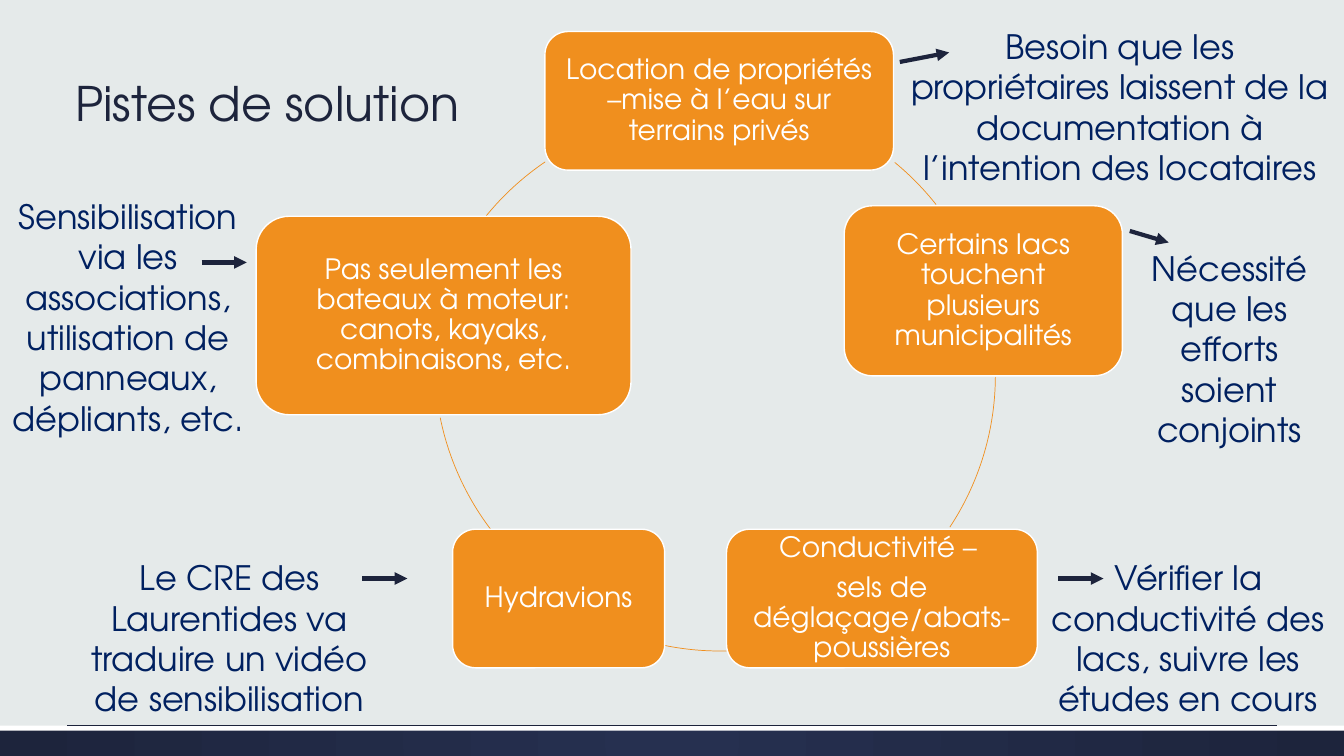
"""Build the slide "Pistes de solution": a ring of topics with notes and arrows."""
from lxml.etree import SubElement
from pptx import Presentation
from pptx.dml.color import RGBColor
from pptx.enum.shapes import MSO_CONNECTOR, MSO_SHAPE
from pptx.enum.text import MSO_ANCHOR, PP_ALIGN
from pptx.oxml.ns import qn
from pptx.util import Emu, Pt

PX = 9525
FONT = "TeX Gyre Adventor"
COLORS = {
    "background": "E5EAEA",
    "dark": "1D243C",
    "band": "263050",
    "topic": "F08F1E",
    "note": "002060",
    "white": "FFFFFF",
}
RING_DIAMETER = 525

TOPICS = [
    (519, 30, 332, 132, ["Location de propriétés –mise à l’eau sur terrains privés"]),
    (804, 196, 265, 162, ["Certains lacs touchent plusieurs municipalités"]),
    (692, 504, 296, 132, ["Conductivité – ", "sels de déglaçage/abats-poussières"]),
    (431, 504, 202, 132, ["Hydravions"]),
    (244, 206, 357, 189, ["Pas seulement les bateaux à moteur: canots, kayaks, combinaisons, etc."]),
]
ARCS = [
    (423, 95, 309.4, 321.7),
    (423, 95, 0.3, 33.4),
    (423, 95, 88.6, 101.5),
    (414, 83, 142.9, 168.5),
    (404, 109, 219.2, 235.9),
]
NOTES = [
    (983, 526, 297, 165, "Vérifier la conductivité des lacs, suivre les études en cours"),
    (70, 526, 297, 165, "Le CRE des Laurentides va traduire un vidéo de sensibilisation"),
    (1079, 231, 184, 204, "Nécessité que les efforts soient conjoints"),
    (857, 20, 419, 165, "Besoin que les propriétaires laissent de la documentation à l’intention des locataires"),
    (0, 182, 244, 242, "Sensibilisation via les associations, utilisation de panneaux, dépliants, etc."),
]
ARROWS = [
    (1008, 551, 1051, 551),
    (345, 551, 388, 551),
    (1076, 220, 1113, 231),
    (857, 59, 904, 50),
    (192, 250, 235, 250),
]


def px(*lengths):
    """Turn pixel lengths into EMU."""
    return [Emu(length * PX) for length in lengths]


def color(name):
    """Return the named colour."""
    return RGBColor.from_string(COLORS[name])


def add_preset(slide, preset, *box):
    """Add a preset shape without shadow."""
    shape = slide.shapes.add_shape(preset, *px(*box))
    shape.shadow.inherit = False
    return shape


def write(frame, lines, size, color_name, align, spacing=1.0, after=0):
    """Fill a text frame with uniformly styled paragraphs."""
    frame.word_wrap = True
    for index, line in enumerate(lines):
        paragraph = frame.add_paragraph() if index else frame.paragraphs[0]
        paragraph.text = line
        paragraph.alignment = align
        paragraph.line_spacing = spacing
        paragraph.space_before = Pt(0)
        paragraph.space_after = Pt(after)
        paragraph.font.name = FONT
        paragraph.font.size = Pt(size)
        paragraph.font.color.rgb = color(color_name)


def add_title(slide, text):
    """Add the bottom-anchored title."""
    frame = slide.shapes.add_textbox(*px(62, 0, 998, 130)).text_frame
    frame.vertical_anchor = MSO_ANCHOR.BOTTOM
    write(frame, [text], 34, "dark", PP_ALIGN.LEFT, 0.9)


def add_topic(slide, left, top, width, height, lines):
    """Add a rounded topic box."""
    shape = add_preset(slide, MSO_SHAPE.ROUNDED_RECTANGLE, left, top, width, height)
    shape.fill.solid()
    shape.fill.fore_color.rgb = color("topic")
    shape.line.color.rgb = color("white")
    shape.line.width = Pt(1)
    frame = shape.text_frame
    frame.margin_left = frame.margin_right = frame.margin_top = frame.margin_bottom = px(8)[0]
    frame.vertical_anchor = MSO_ANCHOR.MIDDLE
    write(frame, lines, 20, "white", PP_ALIGN.CENTER, 0.9, 7)


def add_arc(slide, left, top, *angles):
    """Add a piece of the ring between two clockwise angles in degrees."""
    shape = add_preset(slide, MSO_SHAPE.ARC, left, top, RING_DIAMETER, RING_DIAMETER)
    for index, angle in enumerate(angles):
        shape.adjustments[index] = angle * 0.6
    shape.fill.background()
    shape.line.color.rgb = color("topic")
    shape.line.width = Pt(0.5)


def add_note(slide, left, top, width, height, text):
    """Add a centred note beside a topic."""
    frame = slide.shapes.add_textbox(*px(left, top, width, height)).text_frame
    write(frame, [text], 24, "note", PP_ALIGN.CENTER)


def add_line(slide, ends, width, arrow=False):
    """Add a dark straight line, with an arrowhead if asked."""
    connector = slide.shapes.add_connector(MSO_CONNECTOR.STRAIGHT, *px(*ends))
    connector.line.color.rgb = color("dark")
    connector.line.width = Pt(width)
    if arrow:
        SubElement(connector.line._get_or_add_ln(), qn("a:tailEnd"), type="triangle")
    SubElement(connector._element.spPr, qn("a:effectLst"))


def add_footer(slide):
    """Add the gradient band, its white edge and the rule above."""
    band = add_preset(slide, MSO_SHAPE.RECTANGLE, 0, 691, 1280, 29)
    band.line.fill.background()
    band.fill.gradient()
    for stop, name in zip(band.fill.gradient_stops, ("band", "dark")):
        stop.color.rgb = color(name)
    gradient = band._element.spPr.find(qn("a:gradFill"))
    gradient.remove(gradient.find(qn("a:lin")))
    circle = SubElement(gradient, qn("a:path"), path="circle")
    SubElement(circle, qn("a:fillToRect"), l="50000", t="50000", r="50000", b="50000")
    edge = add_preset(slide, MSO_SHAPE.RECTANGLE, 0, 691, 1280, 5)
    edge.fill.solid()
    edge.fill.fore_color.rgb = color("white")
    edge.line.fill.background()
    add_line(slide, (64, 691, 1216, 691), 0.75)


def main():
    """Build and save the presentation."""
    presentation = Presentation()
    presentation.slide_width, presentation.slide_height = px(1280, 720)
    slide = presentation.slides.add_slide(presentation.slide_layouts[6])
    slide.background.fill.solid()
    slide.background.fill.fore_color.rgb = color("background")
    add_footer(slide)
    add_title(slide, "Pistes de solution")
    for arc in ARCS:
        add_arc(slide, *arc)
    for topic in TOPICS:
        add_topic(slide, *topic)
    for note in NOTES:
        add_note(slide, *note)
    for arrow in ARROWS:
        add_line(slide, arrow, 3, arrow=True)
    presentation.save("out.pptx")


if __name__ == "__main__":
    main()
